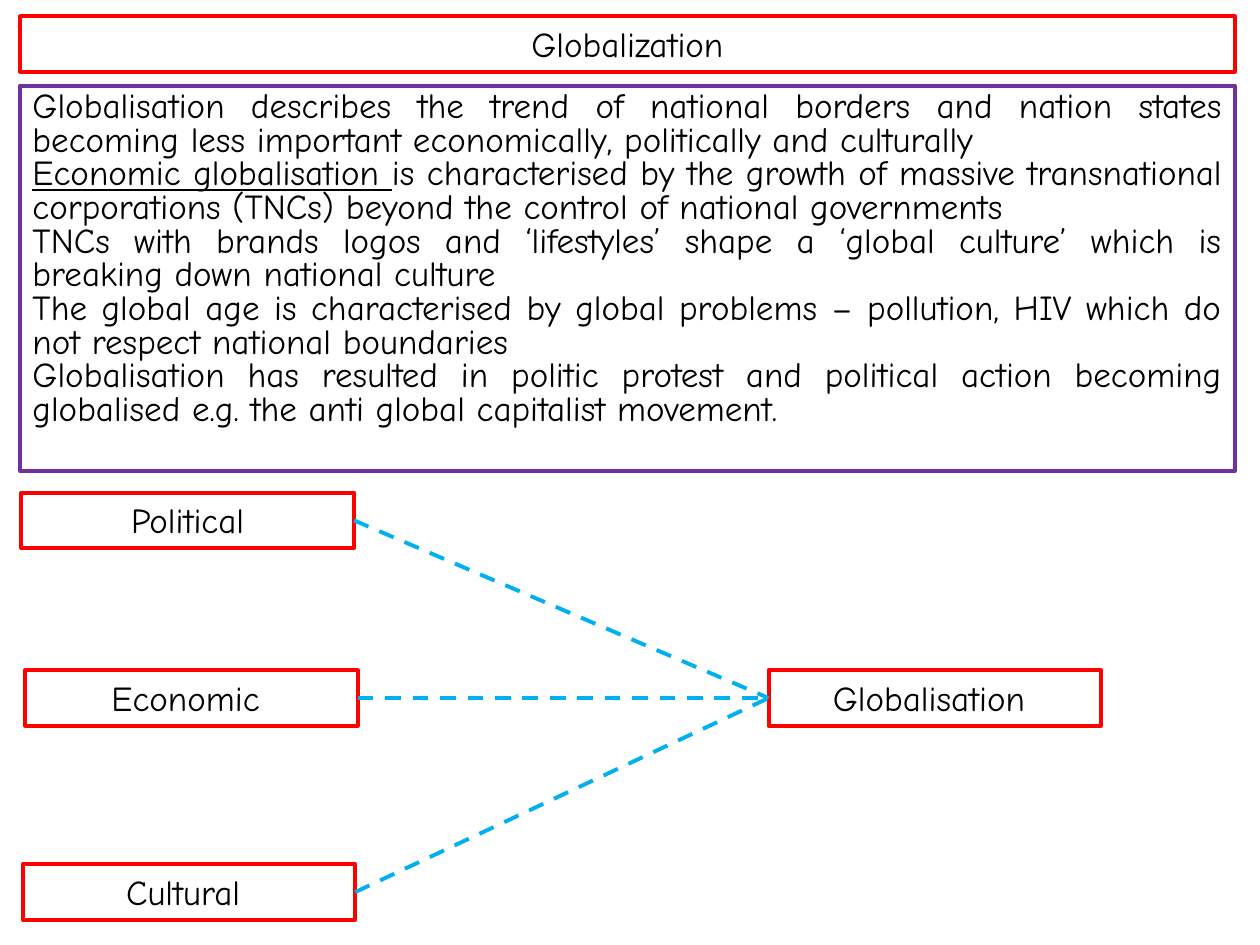
from lxml.etree import SubElement
from pptx import Presentation
from pptx.dml.color import RGBColor
from pptx.enum.dml import MSO_LINE
from pptx.enum.shapes import MSO_CONNECTOR, MSO_SHAPE
from pptx.enum.text import MSO_ANCHOR, MSO_AUTO_SIZE, PP_ALIGN
from pptx.oxml.ns import qn
from pptx.util import Inches, Pt

# Content
TITLE = "Globalization"
UNDERLINED = "Economic globalisation "
STATEMENTS = [
    "Globalisation describes the trend of national borders and nation states "
    "becoming less important economically, politically and culturally",
    UNDERLINED + "is characterised by the growth of massive transnational "
    "corporations (TNCs) beyond the control of national governments",
    "TNCs with brands logos and ‘lifestyles’ shape a ‘global culture’ which is "
    "breaking down national culture",
    "The global age is characterised by global problems – pollution, HIV which "
    "do not respect national boundaries",
    "Globalisation has resulted in politic protest and political action becoming "
    "globalised e.g. the anti global capitalist movement.",
]
# Label, left, top
STRANDS = [
    ("Political", 0.17, 3.91),
    ("Economic ", 0.2, 5.32),
    ("Cultural ", 0.18, 6.86),
]
OUTCOME = ("Globalisation ", 6.1, 5.32)

# Style
COLOURS = {"text": "000000", "label": "FF0000", "summary": "7030A0", "link": "00B0F0"}
FONT, TEXT_SIZE, LINE_WIDTH = "Comic Neue", Pt(20), Pt(2.25)
MARGIN, FULL_WIDTH = 0.16, 9.64
LABEL_WIDTH, LABEL_HEIGHT = 2.64, 0.44
RIGHT_SIDE, LEFT_SIDE = 3, 1


def colour(name):
    return RGBColor.from_string(COLOURS[name])


def outline(shape, name):
    shape.line.color.rgb = colour(name)
    shape.line.width = LINE_WIDTH


def place(shape, left, top, width, height):
    shape.left, shape.top = Inches(left), Inches(top)
    shape.width, shape.height = Inches(width), Inches(height)


def format_box(box, border, align, spacing=1.0):
    box.fill.background()
    outline(box, border)
    frame = box.text_frame
    frame.word_wrap = True
    frame.auto_size = MSO_AUTO_SIZE.NONE
    frame.vertical_anchor = MSO_ANCHOR.TOP
    for paragraph in frame.paragraphs:
        paragraph.alignment = align
        paragraph.line_spacing = spacing
        for run in paragraph.runs:
            run.font.name = FONT
            run.font.size = TEXT_SIZE
            run.font.color.rgb = colour("text")


def add_label(slide, text, left, top):
    label = slide.shapes.add_shape(
        MSO_SHAPE.RECTANGLE, Inches(left), Inches(top),
        Inches(LABEL_WIDTH), Inches(LABEL_HEIGHT))
    label.shadow.inherit = False
    label.text_frame.text = text
    format_box(label, "label", PP_ALIGN.CENTER)
    return label


def add_link(slide, strand, outcome):
    link = slide.shapes.add_connector(MSO_CONNECTOR.STRAIGHT, 0, 0, 0, 0)
    link.begin_connect(strand, RIGHT_SIDE)
    link.end_connect(outcome, LEFT_SIDE)
    outline(link, "link")
    link.line.dash_style = MSO_LINE.DASH
    SubElement(link._element.spPr, qn("a:effectLst"))


def main():
    prs = Presentation()
    prs.slide_width, prs.slide_height = Inches(10), Inches(7.5)
    slide = prs.slides.add_slide(prs.slide_layouts[5])

    # Title
    title = slide.shapes.title
    place(title, MARGIN, 0.13, FULL_WIDTH, LABEL_HEIGHT)
    title.text_frame.text = TITLE
    format_box(title, "label", PP_ALIGN.CENTER)

    # Summary, with its key term underlined
    summary = slide.shapes.add_textbox(0, 0, 0, 0)
    place(summary, MARGIN, 0.68, FULL_WIDTH, 3.06)
    summary.text_frame.text = "\n".join(STATEMENTS)
    for paragraph in summary.text_frame.paragraphs:
        if paragraph.text.startswith(UNDERLINED):
            term = paragraph.runs[0]
            paragraph.add_run().text = term.text[len(UNDERLINED):]
            term.text = UNDERLINED
            term.font.underline = True
    format_box(summary, "summary", PP_ALIGN.JUSTIFY, 0.8)

    # Three strands leading to globalisation
    outcome = add_label(slide, *OUTCOME)
    for strand in STRANDS:
        add_link(slide, add_label(slide, *strand), outcome)

    prs.save("out.pptx")


if __name__ == "__main__":
    main()
